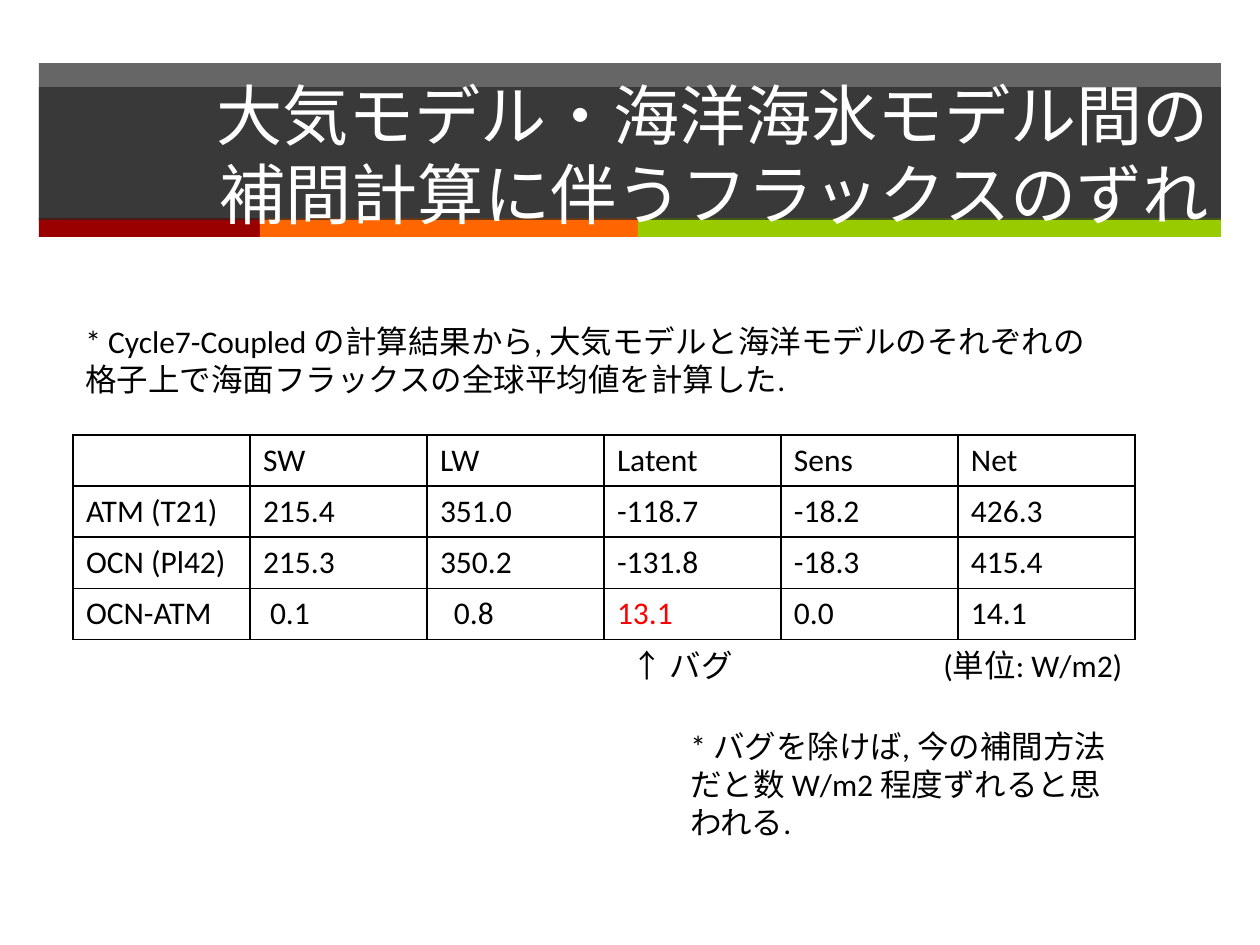
from lxml import etree
from pptx import Presentation
from pptx.dml.color import RGBColor
from pptx.enum.shapes import MSO_SHAPE
from pptx.enum.text import MSO_ANCHOR, MSO_AUTO_SIZE, PP_ALIGN
from pptx.oxml.ns import qn
from pptx.util import Pt

RECT = MSO_SHAPE.RECTANGLE
MIDDLE = MSO_ANCHOR.MIDDLE
FIXED = MSO_AUTO_SIZE.NONE
RIGHT = PP_ALIGN.RIGHT

BLACK = RGBColor(0x00, 0x00, 0x00)
WHITE = RGBColor(0xFF, 0xFF, 0xFF)
DARK = RGBColor(0x26, 0x26, 0x26)
MAROON = RGBColor(0x99, 0x00, 0x00)
ORANGE = RGBColor(0xFF, 0x66, 0x00)
GREEN = RGBColor(0x99, 0xCC, 0x00)
RED = RGBColor(0xFF, 0x00, 0x00)

FONT = "Calibri"
SCALE = 914400 / 126
LEFT, WIDE = 39, 1182
COL, ROW = 177, 51
PAD = 13

TITLE = "大気モデル・海洋海氷モデル間の\v補間計算に伴うフラックスのずれ"
STRIPES = [(221, MAROON), (378, ORANGE), (583, GREEN)]
ROWS = [
    ["", "SW", "LW", "Latent", "Sens", "Net"],
    ["ATM (T21)", "215.4", "351.0", "-118.7", "-18.2", "426.3"],
    ["OCN (Pl42)", "215.3", "350.2", "-131.8", "-18.3", "415.4"],
    ["OCN-ATM", "0.1", "0.8", "13.1", "0.0", "14.1"],
]
INDENTS = {(3, 1): 7, (3, 2): 14}
BUG = (3, 3)
NOTES = [
    ((931, 640, 207, 50), "(単位: W/m2)"),
    ((73, 316, 1038, 89),
     "* Cycle7-Coupled の計算結果から, 大気モデルと海洋モデルの"
     "それぞれの格子上で海面フラックスの全球平均値を計算した."),
    ((619, 640, 152, 50), "↑ バグ"),
    ((678, 721, 460, 127),
     "* バグを除けば, 今の補間方法だと数 W/m2 程度ずれると思われる."),
]


def px(n):
    return round(n * SCALE)


def box(*sides):
    return [px(n) for n in sides]


def style(para, size, color):
    para.font.name = FONT
    para.font.size = Pt(size)
    para.font.color.rgb = color


def paint(shape, color, alpha=100):
    shape.fill.solid()
    shape.fill.fore_color.rgb = color
    if alpha < 100:
        node = shape.element.spPr.find(qn("a:solidFill"))[0]
        etree.SubElement(node, qn("a:alpha"), val=str(alpha * 1000))


def add_bar(slide, sides, color, alpha=100):
    bar = slide.shapes.add_shape(RECT, *box(*sides))
    bar.shadow.inherit = False
    bar.line.fill.background()
    paint(bar, color, alpha)


def add_bands(slide):
    add_bar(slide, (LEFT, 63, WIDE, 157), DARK, 70)
    left = LEFT
    for width, color in STRIPES:
        add_bar(slide, (left, 218, width, 19), color)
        left += width


def set_title(slide):
    title = slide.shapes.title
    title.left, title.top, title.width, title.height = box(LEFT, 87, WIDE, 133)
    paint(title, DARK, 70)
    frame = title.text_frame
    frame.auto_size = FIXED
    frame.vertical_anchor = MIDDLE
    para = frame.paragraphs[0]
    para.text = TITLE
    para.alignment = RIGHT
    style(para, 37.8, WHITE)
    slide.shapes.element.append(title.element)


def add_edges(cell):
    props = cell._tc.get_or_add_tcPr()
    for side in ("lnL", "lnR", "lnT", "lnB"):
        line = etree.SubElement(props, qn("a:" + side), w=str(Pt(1)))
        fill = etree.SubElement(line, qn("a:solidFill"))
        etree.SubElement(fill, qn("a:srgbClr"), val=str(BLACK))


def add_grid(slide):
    rows, cols = len(ROWS), len(ROWS[0])
    sides = box(73, 435, COL * cols, ROW * rows)
    table = slide.shapes.add_table(rows, cols, *sides).table
    table.first_row = False
    table.horz_banding = False
    for col in table.columns:
        col.width = px(COL)
    for row in table.rows:
        row.height = px(ROW)
    for i, row in enumerate(ROWS):
        for j, text in enumerate(row):
            cell = table.cell(i, j)
            add_edges(cell)
            cell.fill.background()
            cell.margin_left = px(PAD + INDENTS.get((i, j), 0))
            para = cell.text_frame.paragraphs[0]
            para.text = text
            style(para, 18, RED if (i, j) == BUG else BLACK)


def add_note(slide, sides, text):
    frame = slide.shapes.add_textbox(*box(*sides)).text_frame
    frame.word_wrap = True
    para = frame.paragraphs[0]
    para.text = text
    style(para, 18, BLACK)


def main():
    deck = Presentation()
    deck.slide_width, deck.slide_height = box(1260, 945)
    slide = deck.slides.add_slide(deck.slide_layouts[5])
    add_bands(slide)
    set_title(slide)
    add_grid(slide)
    for sides, text in NOTES:
        add_note(slide, sides, text)
    deck.save("out.pptx")


if __name__ == "__main__":
    main()
